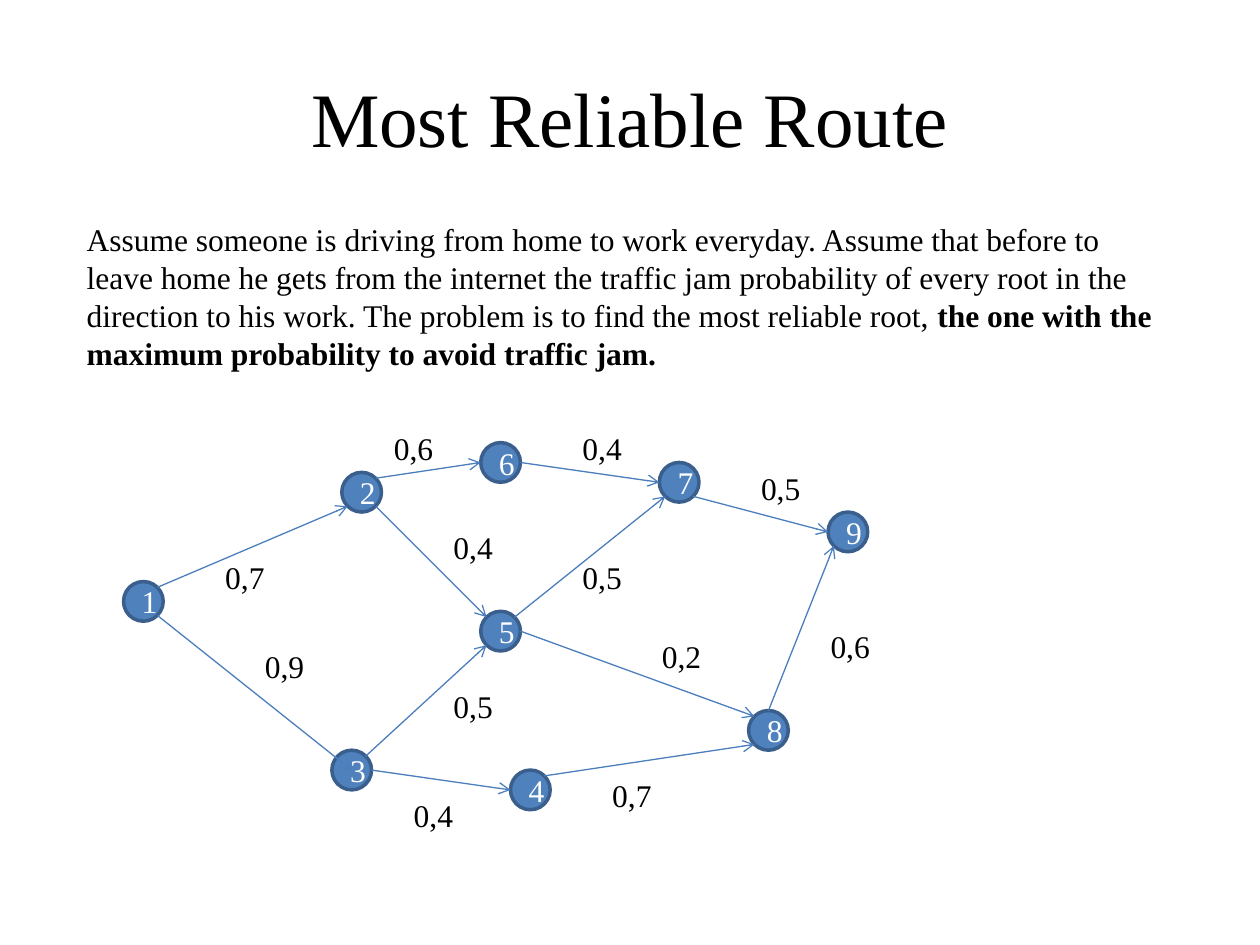
from dataclasses import dataclass
from math import sqrt

from lxml import etree
from pptx import Presentation
from pptx.dml.color import RGBColor
from pptx.enum.shapes import MSO_CONNECTOR, MSO_SHAPE
from pptx.enum.text import MSO_ANCHOR, PP_ALIGN
from pptx.oxml.ns import qn
from pptx.util import Pt

OVAL = MSO_SHAPE.OVAL
STRAIGHT = MSO_CONNECTOR.STRAIGHT
MIDDLE, TOP = MSO_ANCHOR.MIDDLE, MSO_ANCHOR.TOP
CENTER, LEFT = PP_ALIGN.CENTER, PP_ALIGN.LEFT


@dataclass(frozen=True)
class Theme:
    """Colours, type sizes and line widths of the slide."""
    font: str = "Times New Roman"
    ink: RGBColor = RGBColor(0, 0, 0)
    node_ink: RGBColor = RGBColor(255, 255, 255)
    node_fill: RGBColor = RGBColor(0x4F, 0x81, 0xBD)
    node_line: RGBColor = RGBColor(0x3A, 0x5F, 0x8C)
    edge: RGBColor = RGBColor(0x4B, 0x7E, 0xBC)
    title: Pt = Pt(44)
    body: Pt = Pt(18)
    node_width: Pt = Pt(2)
    edge_width: Pt = Pt(0.75)


THEME = Theme()

TITLE = "Most Reliable Route"
PROBLEM = [
    ("Assume someone is driving from home to work everyday. Assume that before to "
     "leave home he gets from the internet the traffic jam probability of every root "
     "in the direction to his work. The problem is to find the most reliable root, ", False),
    ("the one with the maximum probability to avoid traffic jam.", True),
]

GRID_COLUMNS = 77
NODE_SIZE = 4
LABEL_SIZE = (6.6, 5.1)
NODES = {
    "9": (71, 9), "4": (39, 35), "1": (0, 16), "8": (63, 29), "3": (21, 33),
    "2": (22, 5), "7": (54, 4), "5": (36, 19), "6": (36, 2),
}

DIAGONAL = sqrt(0.5)
SIDES = {
    "center": (0, 0), "top": (0, -1), "left": (-1, 0), "right": (1, 0),
    "top left": (-DIAGONAL, -DIAGONAL), "top right": (DIAGONAL, -DIAGONAL),
    "bottom left": (-DIAGONAL, DIAGONAL), "bottom right": (DIAGONAL, DIAGONAL),
}

EDGES = [
    ("1", "top right", "2", "bottom left", "0,7", (9, 13)),
    ("2", "bottom right", "5", "top left", "0,4", (32, 10)),
    ("2", "top right", "6", "left", "0,6", (26, 0)),
    ("6", "right", "7", "left", "0,4", (45, 0)),
    ("1", "bottom right", "3", "center", "0,9", (13, 22)),
    ("3", "top right", "5", "bottom left", "0,5", (32, 26)),
    ("3", "right", "4", "left", "0,4", (28, 37)),
    ("5", "right", "8", "top left", "0,2", (53, 21)),
    ("7", "bottom right", "9", "left", "0,5", (63, 4)),
    ("4", "top right", "8", "bottom left", "0,7", (48, 35)),
    ("8", "top", "9", "bottom left", "0,6", (70, 20)),
    ("5", "top right", "7", "bottom left", "0,5", (45, 13)),
]


def write(sp, runs, size, color, align=LEFT, anchor=TOP, wrap=True):
    """Fill a shape with one paragraph of (text, bold) runs."""
    tf = sp.text_frame
    for name, value in {"word_wrap": wrap, "vertical_anchor": anchor}.items():
        setattr(tf, name, value)
    p = tf.paragraphs[0]
    p.alignment = align
    for text, bold in runs:
        r = p.add_run()
        r.text = text
        for name, value in {"name": THEME.font, "size": size, "bold": bold}.items():
            setattr(r.font, name, value)
        r.font.color.rgb = color


def add_text(s, box, runs, size, **layout):
    """Add a text box in the given box."""
    sp = s.shapes.add_textbox(*map(Pt, box))
    write(sp, runs, size, THEME.ink, **layout)


def add_node(s, box, name):
    """Add a numbered round node."""
    sp = s.shapes.add_shape(OVAL, *map(Pt, box))
    sp.shadow.inherit = False
    sp.fill.solid()
    sp.fill.fore_color.rgb = THEME.node_fill
    sp.line.color.rgb = THEME.node_line
    sp.line.width = THEME.node_width
    write(sp, [(name, False)], THEME.body, THEME.node_ink, CENTER, MIDDLE)


def add_edge(s, start, end):
    """Add an arrow between two points."""
    line = s.shapes.add_connector(STRAIGHT, *map(Pt, (*start, *end)))
    line.line.color.rgb = THEME.edge
    line.line.width = THEME.edge_width
    etree.SubElement(line.line._get_or_add_ln(), qn("a:tailEnd"), type="arrow")
    etree.SubElement(line._element.spPr, qn("a:effectLst"))


def add_network(s, left, top, width):
    """Draw the road network on a square grid that spans the given width."""
    unit = width / GRID_COLUMNS

    def place(column, row):
        """Turn a grid position into points."""
        return left + column * unit, top + row * unit

    def port(node, side):
        """Find the point on a node's rim at the given side."""
        radius = NODE_SIZE / 2
        (column, row), (dx, dy) = NODES[node], SIDES[side]
        return place(column + radius * (1 + dx), row + radius * (1 + dy))

    for name, position in NODES.items():
        add_node(s, (*place(*position), NODE_SIZE * unit, NODE_SIZE * unit), name)
    for source, exit_side, target, entry_side, _, _ in EDGES:
        add_edge(s, port(source, exit_side), port(target, entry_side))
    for *_, probability, position in EDGES:
        box = (*place(*position), *(length * unit for length in LABEL_SIZE))
        add_text(s, box, [(probability, False)], THEME.body, wrap=False)


def main():
    """Build and save the slide."""
    prs = Presentation()
    prs.slide_width, prs.slide_height = Pt(720), Pt(540)
    s = prs.slides.add_slide(prs.slide_layouts[6])
    add_text(s, (36, 21.6, 648, 90), [(TITLE, False)], THEME.title,
             align=CENTER, anchor=MIDDLE)
    add_text(s, (42.5, 122.4, 626.4, 94.3), PROBLEM, THEME.body)
    add_network(s, 70.6, 241.6, 436.6)
    prs.save("out.pptx")


if __name__ == "__main__":
    main()
